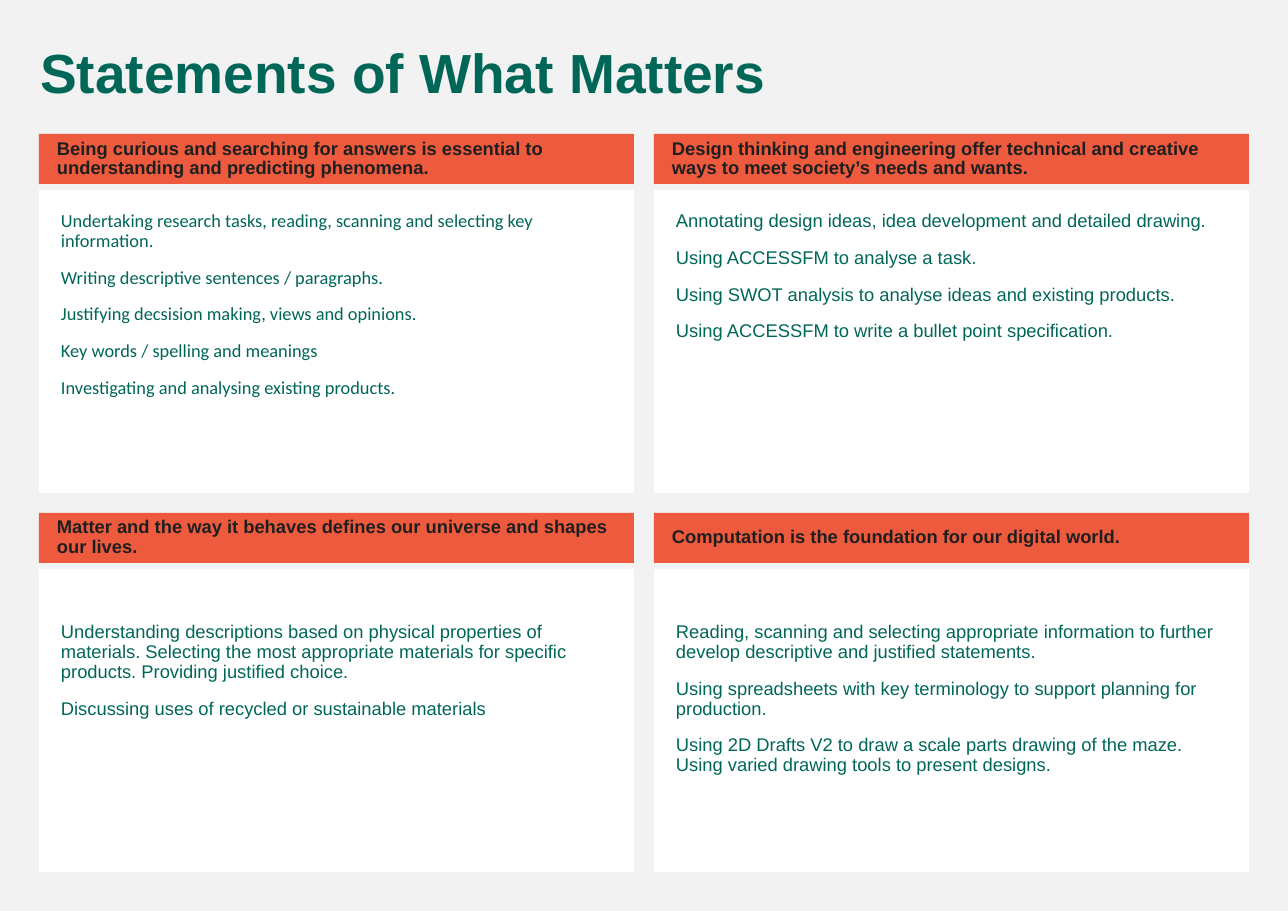
from dataclasses import dataclass
from pptx import Presentation
from pptx.dml.color import RGBColor as Rgb
from pptx.enum.shapes import MSO_SHAPE as Kind
from pptx.enum.text import MSO_ANCHOR as Anchor, PP_ALIGN as Align
from pptx.util import Pt

TITLE = "Statements of What Matters"
CARDS = [
    ("Being curious and searching for answers is essential to understanding and predicting phenomena.",
     ["Undertaking research tasks, reading, scanning and selecting key information.",
      "Writing descriptive sentences / paragraphs.",
      "Justifying decsision making, views and opinions.",
      "Key words / spelling and meanings",
      "Investigating and analysing existing products."], "Calibri", 22),
    ("Design thinking and engineering offer technical and creative ways to meet society’s needs and wants.",
     ["Annotating design ideas, idea development and detailed drawing.",
      "Using ACCESSFM to analyse a task.",
      "Using SWOT analysis to analyse ideas and existing products.",
      "Using ACCESSFM to write a bullet point specification."], "Arial", 22),
    ("Matter and the way it behaves defines our universe and shapes our lives.",
     ["Understanding descriptions based on physical properties of materials. "
      "Selecting the most appropriate materials for specific products. Providing justified choice.",
      "Discussing uses of recycled or sustainable materials"], "Arial", 54),
    ("Computation is the foundation for our digital world.",
     ["Reading, scanning and selecting appropriate information to further develop "
      "descriptive and justified statements.",
      "Using spreadsheets with key terminology to support planning for production.",
      "Using 2D Drafts V2 to draw a scale parts drawing of the "
      "maze. Using varied drawing tools to present designs."], "Arial", 54),
]


@dataclass(frozen=True)
class Theme:
    back: str = "F2F2F2"
    card: str = "FFFFFF"
    band: str = "ED5A3E"
    green: str = "006758"
    dark: str = "1F1F1F"
    font: str = "Arial"
    big: int = 36
    text: int = 12
    gap: int = 11
    line: float = 0.9


theme = Theme()
SCALE = 914400 / 110.2
WIDE, HIGH = 1288, 911
LEFT, TOP = 39, 134
CARD_W, CARD_H, BAND_H = 595, 303, 50
STEP_X, STEP_Y, DROP = 615, 379, 56


def px(num):
    return round(num * SCALE)


def write(shape, lines, size, color, font, bold, pads, anchor=Anchor.TOP):
    frame = shape.text_frame
    frame.text = "\n".join(lines)
    frame.word_wrap = True
    frame.vertical_anchor = anchor
    (frame.margin_left, frame.margin_top,
     frame.margin_right, frame.margin_bottom) = map(px, pads)
    for para in frame.paragraphs:
        para.alignment = Align.LEFT
        para.line_spacing = theme.line
        para.space_before = Pt(theme.gap)
        for run in para.runs:
            run.font.size = Pt(size)
            run.font.name = font
            run.font.bold = bold
            run.font.color.rgb = Rgb.from_string(color)


def block(slide, box, fill):
    shape = slide.shapes.add_shape(Kind.RECTANGLE, *map(px, box))
    shape.shadow.inherit = False
    shape.fill.solid()
    shape.fill.fore_color.rgb = Rgb.from_string(fill)
    shape.line.fill.background()
    return shape


def main():
    deck = Presentation()
    deck.slide_width, deck.slide_height = px(WIDE), px(HIGH)
    slide = deck.slides.add_slide(deck.slide_layouts[6])
    slide.background.fill.solid()
    slide.background.fill.fore_color.rgb = Rgb.from_string(theme.back)

    title = slide.shapes.add_textbox(*map(px, (29, 40, 1221, 72)))
    write(title, [TITLE], theme.big, theme.green, theme.font, True, (11, 6, 11, 6))

    for num, (head, lines, font, pad) in enumerate(CARDS):
        row, col = divmod(num, 2)
        x, y = LEFT + col * STEP_X, TOP + row * STEP_Y
        card = block(slide, (x, y + DROP, CARD_W, CARD_H), theme.card)
        write(card, lines, theme.text, theme.green, font, False, (22, pad, 22, 22))
        band = block(slide, (x, y, CARD_W, BAND_H), theme.band)
        write(band, [head], theme.text, theme.dark, theme.font, True,
              (18, 6, 11, 6), Anchor.MIDDLE)

    deck.save("out.pptx")


if __name__ == "__main__":
    main()
